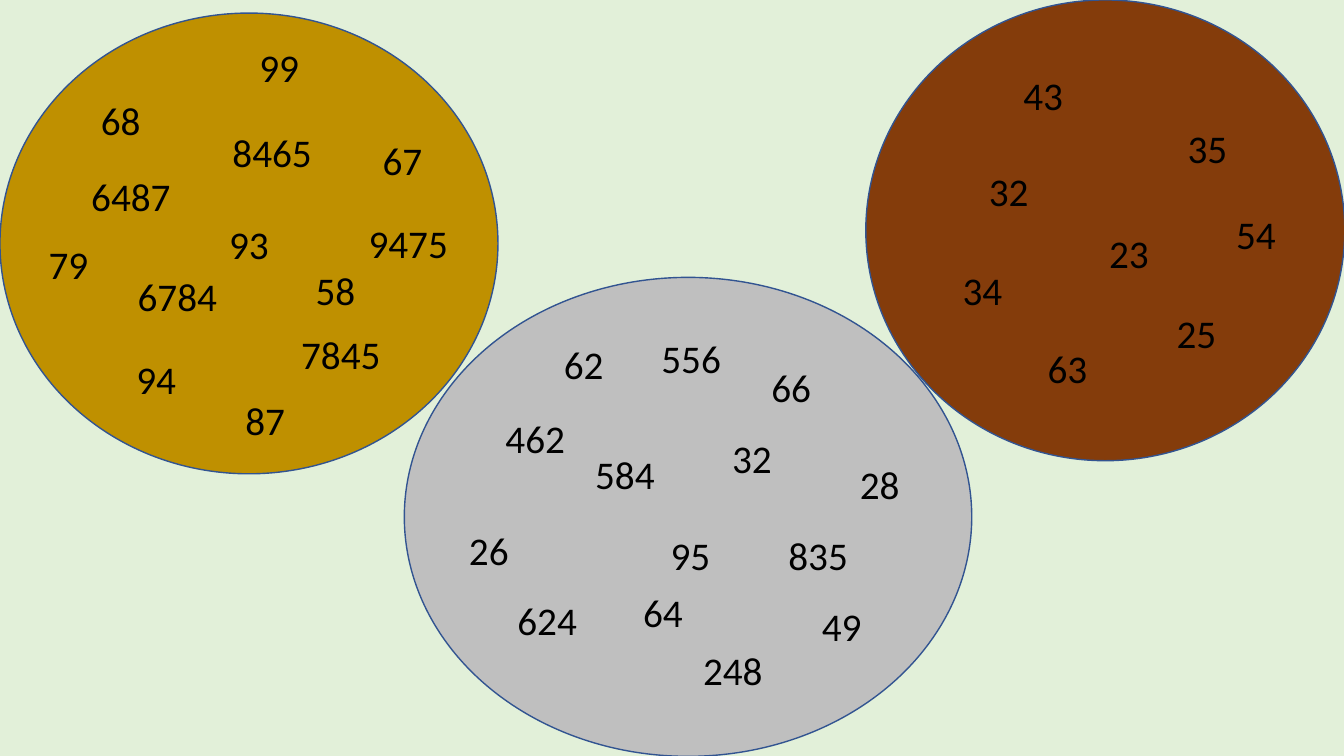
from pptx import Presentation
from pptx.dml.color import RGBColor
from pptx.enum.shapes import MSO_SHAPE
from pptx.enum.text import MSO_ANCHOR, MSO_AUTO_SIZE, PP_ALIGN
from pptx.util import Cm, Pt

CIRCLES = [
    ("BF9000", (0, 0.33, 12.55, 11.61), "93"),
    ("BFBFBF", (10.19, 6.99, 14.3, 12.07), ""),
    ("843C0B", (21.82, 0, 12.07, 11.61), ""),
]

GOLD_TWO_DIGIT = [
    ("79", -0.41, 5.92), ("68", 0.91, 2.29), ("67", 8.01, 3.3),
    ("87", 4.55, 9.86), ("94", 1.8, 8.84), ("99", 4.9, 0.97),
    ("58", 6.32, 6.58),
]
GOLD_FOUR_DIGIT = [
    ("6487", 1.7, 4.22), ("8465", 5.26, 3.12), ("6784", 2.87, 6.73),
    ("9475", 8.69, 5.41), ("7845", 6.99, 8.2),
]
GREY = [
    ("32", 17.35, 10.82), ("26", 10.72, 13.13), ("62", 13.11, 8.46),
    ("49", 19.61, 15.06), ("66", 18.34, 9.04), ("64", 15.11, 14.71),
    ("28", 20.57, 11.48), ("95", 15.8, 13.26), ("462", 11.89, 10.31),
    ("624", 12.19, 14.91), ("556", 15.82, 8.31), ("835", 19.02, 13.26),
    ("248", 16.87, 16.15), ("584", 14.15, 11.23),
]
BROWN = [
    ("32", 24.66, 4.09), ("34", 24, 6.58), ("63", 26.14, 8.56),
    ("43", 25.53, 1.68), ("54", 30.89, 5.18), ("35", 29.67, 3.02),
    ("25", 29.39, 7.67), ("23", 27.69, 5.66),
]
NUMBER_GROUPS = [
    (GOLD_TWO_DIGIT, 4.27, True),
    (GOLD_FOUR_DIGIT, 3.2, True),
    (GREY, 3.2, True),
    (BROWN, 1.52, False),
]


def color(value):
    return RGBColor.from_string(value)


class Deck:
    font = {"name": "Calibri", "size": Pt(28)}
    text_color = "000000"
    outline = "325491"
    number_height = 1.45

    def __init__(self, width, height):
        self.prs = Presentation()
        self.prs.slide_width = Cm(width)
        self.prs.slide_height = Cm(height)

    def add_slide(self, background):
        self.s = self.prs.slides.add_slide(self.prs.slide_layouts[6])
        fill = self.s.background.fill
        fill.solid()
        fill.fore_color.rgb = color(background)

    def label(self, tf, text):
        p = tf.paragraphs[0]
        p.alignment = PP_ALIGN.CENTER
        r = p.add_run()
        r.text = text
        for key, value in self.font.items():
            setattr(r.font, key, value)
        r.font.color.rgb = color(self.text_color)

    def circle(self, fill, box, text):
        sp = self.s.shapes.add_shape(MSO_SHAPE.OVAL, *map(Cm, box))
        sp.shadow.inherit = False
        sp.fill.solid()
        sp.fill.fore_color.rgb = color(fill)
        sp.line.color.rgb = color(self.outline)
        sp.line.width = Pt(1)
        sp.text_frame.vertical_anchor = MSO_ANCHOR.MIDDLE
        if text:
            self.label(sp.text_frame, text)

    def number(self, text, left, top, width, wrap):
        box = left, top, width, self.number_height
        tf = self.s.shapes.add_textbox(*map(Cm, box)).text_frame
        frame = {"word_wrap": wrap, "auto_size": MSO_AUTO_SIZE.SHAPE_TO_FIT_TEXT}
        for key, value in frame.items():
            setattr(tf, key, value)
        self.label(tf, text)


def main():
    deck = Deck(33.87, 19.05)
    deck.add_slide("E2F0D9")
    for fill, box, text in CIRCLES:
        deck.circle(fill, box, text)
    for numbers, width, wrap in NUMBER_GROUPS:
        for text, left, top in numbers:
            deck.number(text, left, top, width, wrap)
    deck.prs.save("out.pptx")


if __name__ == "__main__":
    main()
